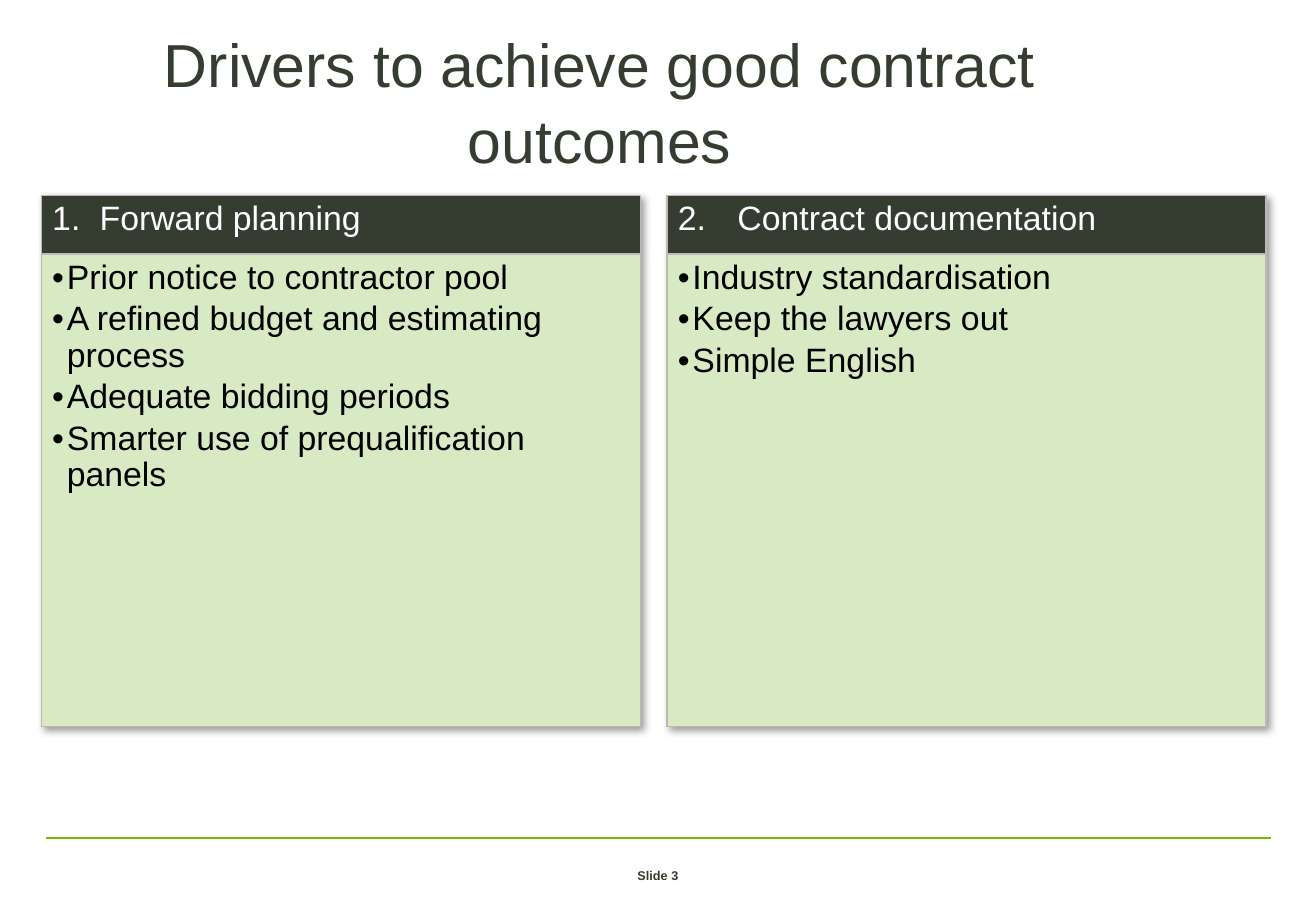
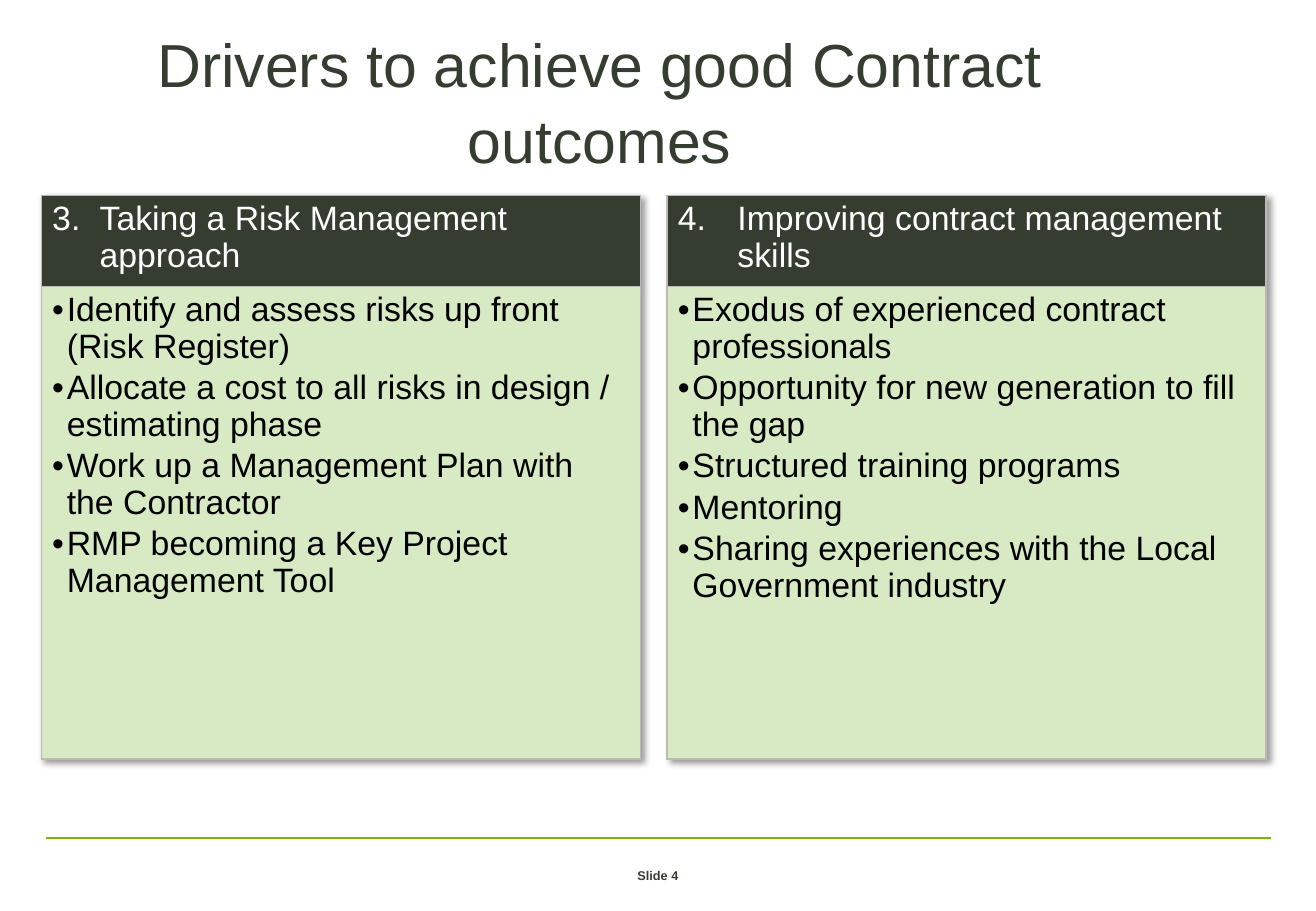
from dataclasses import dataclass

from lxml import etree
from pptx import Presentation
from pptx import util as u
from pptx.dml.color import RGBColor
from pptx.enum import shapes, text
from pptx.oxml import ns

PX = 9144
NO_STYLE = "{2D5ABB26-0587-4C30-8999-92F81FD0307C}"


@dataclass(frozen=True)
class Theme:
    """Colours, font and type sizes shared by the slides."""
    dark: str = "353D30"
    green: str = "7AB800"
    pale: str = "D8EAC4"
    border: str = "BEB9B4"
    white: str = "FFFFFF"
    black: str = "000000"
    font: str = "Arial"
    title: int = 36
    body: int = 20
    footer: int = 13


THEME = Theme()
COLUMNS = (493, 21, 493)
ROWS = (48, 389)
HEADING_INDENTS = (39, 49)
BULLET_INDENT = 12

SLIDES = [
    (3, "Drivers to achieve good contract outcomes", [
        ("1.\tForward planning", [
            "Prior notice to contractor pool",
            "A refined budget and estimating process",
            "Adequate bidding periods",
            "Smarter use of prequalification panels"]),
        ("2.\tContract documentation", [
            "Industry standardisation",
            "Keep the lawyers out",
            "Simple English"])]),
    (4, "Drivers to achieve good Contract outcomes", [
        ("3.\tTaking a Risk Management approach", [
            "Identify and assess risks up front (Risk Register)",
            "Allocate a cost to all risks in design / estimating phase",
            "Work up a Management Plan with the Contractor",
            "RMP becoming a Key Project Management Tool"]),
        ("4.\tImproving contract management skills", [
            "Exodus of experienced contract professionals",
            "Opportunity for new generation to fill the gap",
            "Structured training programs",
            "Mentoring",
            "Sharing experiences with the Local Government industry"])]),
]


def px(*lengths):
    """Turn px lengths into EMU."""
    return [u.Emu(length * PX) for length in lengths]


def child(parent, tag, **attributes):
    """Append a drawing element and return it."""
    values = {name: str(value) for name, value in attributes.items()}
    return etree.SubElement(parent, ns.qn(f"a:{tag}"), values)


def add_span(para, words, size, colour, bold=False):
    """Add one styled run to a paragraph."""
    span = para.add_run()
    span.text = words
    span.font.name = THEME.font
    span.font.size = u.Pt(size)
    span.font.bold = bold
    span.font.color.rgb = RGBColor.from_string(colour)
    return span


def add_box(page, place, insets, anchor):
    """Add a wrapping text box and return its centred first paragraph."""
    frame = page.shapes.add_textbox(*px(*place)).text_frame
    frame.word_wrap = True
    frame.vertical_anchor = anchor
    (frame.margin_left, frame.margin_top,
     frame.margin_right, frame.margin_bottom) = px(*insets)
    para = frame.paragraphs[0]
    para.alignment = text.PP_ALIGN.CENTER
    return para


def add_title(page, words):
    """Add the slide title."""
    para = add_box(page, (47, 16, 893, 115), (0, 4, 0, 0), text.MSO_ANCHOR.TOP)
    para.line_spacing = 1.04
    add_span(para, words, THEME.title, THEME.dark)


def add_footer(page, number):
    """Add the green rule and the lowered slide number."""
    rule = page.shapes.add_connector(
        shapes.MSO_CONNECTOR.STRAIGHT, *px(38, 690, 1046, 690))
    rule.line.color.rgb = RGBColor.from_string(THEME.green)
    rule.line.width = u.Pt(1.5)
    child(rule._element.spPr, "effectLst")
    para = add_box(page, (370, 695, 343, 40), (9, 5, 9, 5), text.MSO_ANCHOR.MIDDLE)
    span = add_span(para, f"Slide {number}", THEME.footer, THEME.dark, bold=True)
    span.font._element.set("baseline", "-25000")


def hang(para, indent):
    """Give a paragraph a hanging indent and return its properties."""
    properties = para._p.get_or_add_pPr()
    properties.set("marL", str(indent * PX))
    properties.set("indent", str(-indent * PX))
    return properties


def add_border(cell, sides):
    """Draw the named cell sides and clear the others."""
    for side in "LRTB":
        edge = child(cell._tc.get_or_add_tcPr(), f"ln{side}", w=u.Pt(1))
        if side in sides:
            child(child(edge, "solidFill"), "srgbClr", val=THEME.border)
        else:
            child(edge, "noFill")


def paint_cell(cell, colour):
    """Border and fill a cell."""
    add_border(cell, "LRTB")
    cell.fill.solid()
    cell.fill.fore_color.rgb = RGBColor.from_string(colour)


def fill_heading(cell, words, indent):
    """Write a numbered heading whose text starts at a tab stop."""
    paint_cell(cell, THEME.dark)
    para = cell.text_frame.paragraphs[0]
    child(child(hang(para, indent), "tabLst"), "tab", pos=indent * PX, algn="l")
    para.line_spacing = 0.97
    add_span(para, words, THEME.body, THEME.white)


def fill_bullets(cell, items):
    """Write a bulleted list."""
    paint_cell(cell, THEME.pale)
    frame = cell.text_frame
    for index, item in enumerate(items):
        para = frame.add_paragraph() if index else frame.paragraphs[0]
        properties = hang(para, BULLET_INDENT)
        child(properties, "buFont", typeface=THEME.font)
        child(properties, "buChar", char="•")
        para.line_spacing = 0.97
        if index:
            para.space_before = u.Pt(3)
        add_span(para, item, THEME.body, THEME.black)


def add_shadow(table):
    """Drop the banded style and give the table a soft shadow."""
    table.first_row = table.horz_banding = False
    properties = table._tbl.tblPr
    properties.find(ns.qn("a:tableStyleId")).text = NO_STYLE
    effects = child(properties, "effectLst")
    shadow = child(effects, "outerShdw", blurRad=50800, dist=38100,
                   dir=2700000, algn="tl", rotWithShape=0)
    child(child(shadow, "prstClr", val="black"), "alpha", val=40000)
    properties.insert(0, effects)


def add_drivers(page, drivers):
    """Add the table holding two drivers with a gap between them."""
    table = page.shapes.add_table(
        len(ROWS), len(COLUMNS), *px(34, 161, sum(COLUMNS), sum(ROWS))).table
    add_shadow(table)
    for column, width in zip(table.columns, px(*COLUMNS)):
        column.width = width
    for row, height in zip(table.rows, px(*ROWS)):
        row.height = height
    for cell in table.iter_cells():
        (cell.margin_left, cell.margin_top,
         cell.margin_right, cell.margin_bottom) = px(9, 5, 9, 5)
    for index, (heading, items) in enumerate(drivers):
        fill_heading(table.cell(0, index * 2), heading, HEADING_INDENTS[index])
        fill_bullets(table.cell(1, index * 2), items)
    for row in range(len(ROWS)):
        gap = table.cell(row, 1)
        add_border(gap, "LR")
        gap.fill.background()


def main():
    """Build and save the deck."""
    deck = Presentation()
    deck.slide_width, deck.slide_height = px(1083, 750)
    for number, title, drivers in SLIDES:
        page = deck.slides.add_slide(deck.slide_layouts[6])
        add_title(page, title)
        add_footer(page, number)
        add_drivers(page, drivers)
    deck.save("out.pptx")


if __name__ == "__main__":
    main()
